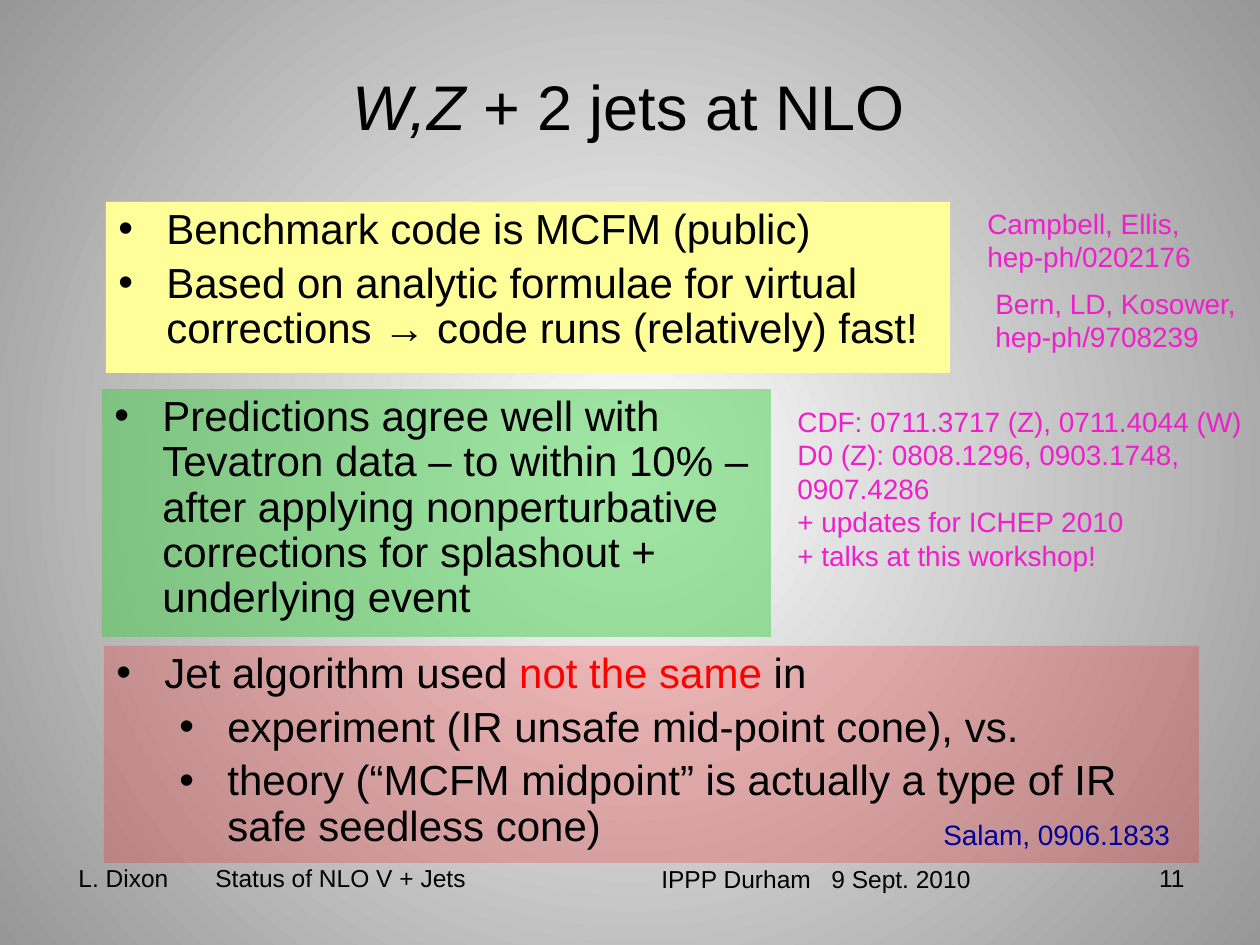
from lxml.etree import SubElement
from pptx import Presentation
from pptx.dml.color import RGBColor
from pptx.enum.shapes import MSO_SHAPE
from pptx.enum.text import MSO_ANCHOR, MSO_AUTO_SIZE, PP_ALIGN
from pptx.oxml.ns import qn
from pptx.util import Emu, Pt

EMU_PER_PX = 914400 / 126
FONT = "Arial"
COLORS = {
    "text": "000000", "alert": "FF0000", "citation": "EF1FCC", "salam": "000099",
    "center": "FFFFFF", "edge": "979797",
    "yellow": "FFFF99", "green": "40CE47", "red": "FF0000",
}


def px(length):
    return Emu(round(length * EMU_PER_PX))


def rgb(name):
    return RGBColor.from_string(COLORS[name])


def add_span(para, text, size, color="text", italic=False):
    span = para.add_run()
    span.text = text
    span.font.name = FONT
    span.font.size = Pt(size)
    span.font.italic = italic
    span.font.color.rgb = rgb(color)


def paragraphs(frame, count):
    return [frame.paragraphs[0]] + [frame.add_paragraph() for _ in range(count - 1)]


def paint_background(page):
    """Radial gradient spreading from the centre of the slide."""
    fill = page.background.fill
    fill.gradient()
    for stop, name in zip(fill.gradient_stops, ("center", "edge")):
        stop.color.rgb = rgb(name)
    gradient = next(page.element.iter(qn("a:gradFill")))
    gradient.remove(gradient.find(qn("a:lin")))
    circle = SubElement(gradient, qn("a:path"), path="circle")
    SubElement(circle, qn("a:fillToRect"), l="50000", t="50000", r="50000", b="50000")


def place_title(page, box):
    title = page.shapes.title
    title.left, title.top, title.width, title.height = map(px, box)
    frame = title.text_frame
    frame.auto_size = MSO_AUTO_SIZE.NONE
    frame.vertical_anchor = MSO_ANCHOR.MIDDLE
    para = frame.paragraphs[0]
    para.alignment = PP_ALIGN.CENTER
    add_span(para, "W,Z", 36, italic=True)
    add_span(para, " + 2 jets at NLO", 36)


def add_label(page, box, lines, size, color="text", wrap=True, align=PP_ALIGN.LEFT, tab=None):
    """Plain lines of text; tab is the distance of a tab stop from the text edge."""
    frame = page.shapes.add_textbox(*map(px, box)).text_frame
    frame.word_wrap = wrap
    for para, line in zip(paragraphs(frame, len(lines)), lines):
        para.alignment = align
        add_span(para, line, size, color)
        if tab:
            stops = SubElement(para._p.get_or_add_pPr(), qn("a:tabLst"))
            SubElement(stops, qn("a:tab"), pos=str(px(tab)), algn="l")


def add_panel(page, box, fill, opacity, items):
    """Filled rectangle of bullets; an item is a level and its (text, color) spans."""
    panel = page.shapes.add_shape(MSO_SHAPE.RECTANGLE, *map(px, box))
    panel.shadow.inherit = False
    panel.line.fill.background()
    panel.fill.solid()
    panel.fill.fore_color.rgb = rgb(fill)
    if opacity < 100:
        color = next(panel.element.spPr.iter(qn("a:srgbClr")))
        SubElement(color, qn("a:alpha"), val=str(opacity * 1000))
    frame = panel.text_frame
    frame.word_wrap = True
    frame.vertical_anchor = MSO_ANCHOR.TOP
    for para, (level, spans) in zip(paragraphs(frame, len(items)), items):
        para.level = level
        para.alignment = PP_ALIGN.LEFT
        para.line_spacing = 0.9
        para.space_before = Pt(4.8)
        props = para._p.get_or_add_pPr()
        props.set("marL", str(px(48 + 63 * level)))
        props.set("indent", str(-px(48)))
        SubElement(props, qn("a:buFont"), typeface=FONT)
        SubElement(props, qn("a:buChar"), char="•")
        for text, name in spans:
            add_span(para, text, 24, name)


def add_panels(page):
    add_panel(page, (106, 202, 844, 171), "yellow", 100, [
        (0, [("Benchmark code is MCFM (public)", "text")]),
        (0, [("Based on analytic formulae for virtual corrections → code runs "
              "(relatively) fast!", "text")]),
    ])
    add_panel(page, (102, 389, 669, 248), "green", 49, [
        (0, [("Predictions agree well with Tevatron data – to within 10% – after applying "
              "nonperturbative corrections for splashout + underlying event", "text")]),
    ])
    add_panel(page, (104, 646, 1095, 217), "red", 21, [
        (0, [("Jet algorithm used ", "text"), ("not the same", "alert"), (" in", "text")]),
        (1, [("experiment (IR unsafe mid-point cone), vs.", "text")]),
        (1, [("theory (“MCFM midpoint” is actually a type of IR safe seedless cone)", "text")]),
    ])


def add_citations(page):
    add_label(page, (975, 200, 241, 81), ["Campbell, Ellis,", "hep-ph/0202176"], 16, "citation")
    add_label(page, (983, 280, 277, 81), ["Bern, LD, Kosower,", "hep-ph/9708239"],
              16, "citation", wrap=False)
    add_label(page, (785, 398, 475, 183), [
        "CDF: 0711.3717 (Z), 0711.4044 (W)",
        "D0 (Z): 0808.1296, 0903.1748,",
        "0907.4286",
        "+ updates for ICHEP 2010",
        "+ talks at this workshop!",
    ], 16, "citation", wrap=False)
    add_label(page, (931, 811, 263, 47), ["Salam, 0906.1833"], 16, "salam")


def add_footer(page, top):
    add_label(page, (66, top, 583, 60), ["L. Dixon\tStatus of NLO V + Jets"], 14, tab=137)
    add_label(page, (649, top + 1, 391, 59), ["IPPP Durham\t9 Sept. 2010"], 14, tab=170)
    add_label(page, (1041, top, 156, 66), ["11"], 14, align=PP_ALIGN.RIGHT)


def main():
    deck = Presentation()
    deck.slide_width, deck.slide_height = px(1260), px(945)
    page = deck.slides.add_slide(deck.slide_layouts[5])
    paint_background(page)
    place_title(page, (62, 26, 1134, 158))
    add_panels(page)
    add_citations(page)
    add_footer(page, 857)
    deck.save("out.pptx")


if __name__ == "__main__":
    main()
